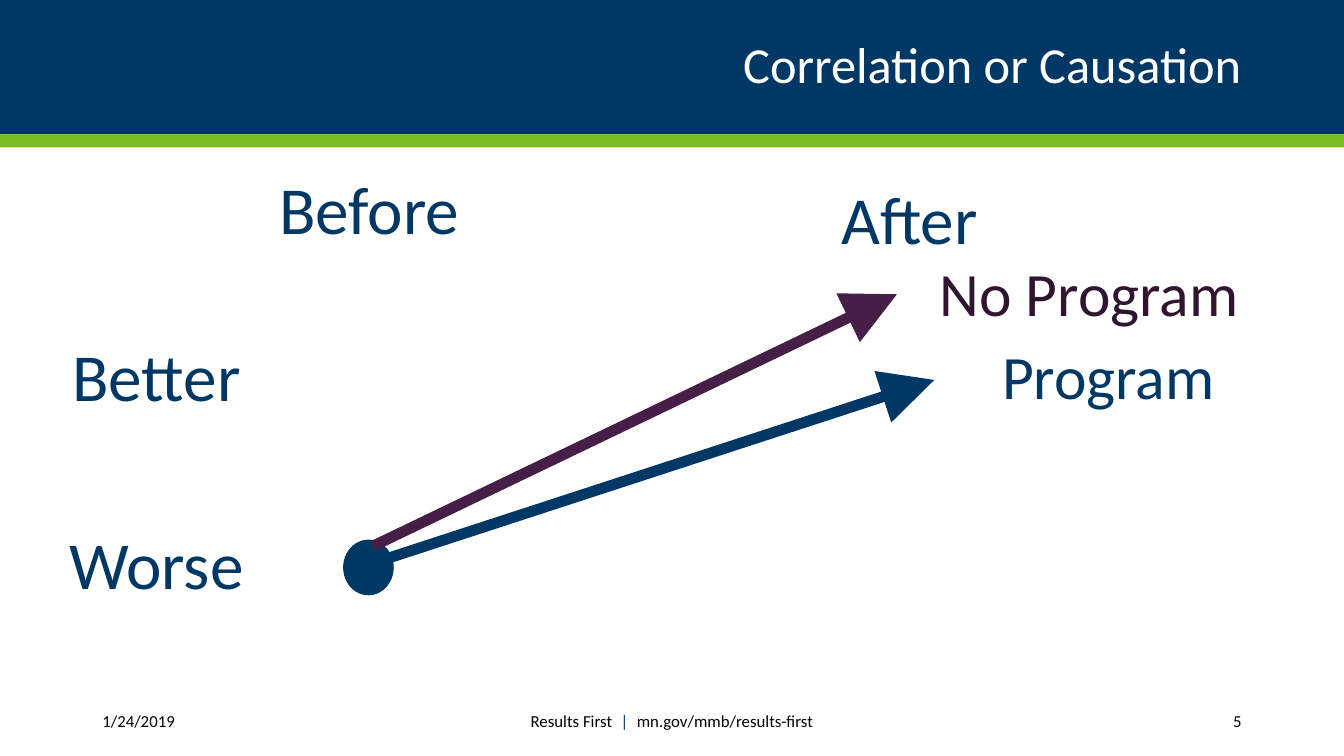
from pptx import Presentation
from pptx.dml.color import RGBColor
from pptx.enum.shapes import MSO_CONNECTOR as Line, MSO_SHAPE as Shape
from pptx.enum.text import MSO_ANCHOR as Anchor, PP_ALIGN as Align
from pptx.oxml.ns import qn
from pptx.util import Pt
from lxml.etree import SubElement

WIDTH, HEIGHT = 960, 540
FONT = "Calibri"
COLORS = {
    "navy": "003865",
    "green": "78BE21",
    "plum": "461F47",
    "dark plum": "2F152F",
    "white": "FFFFFF",
    "black": "000000",
}


def color(name):
    return RGBColor.from_string(COLORS[name])


def style(run, size, ink):
    run.font.name = FONT
    run.font.size = Pt(size)
    run.font.color.rgb = color(ink)


def add_solid(slide, kind, box, ink):
    shape = slide.shapes.add_shape(kind, *map(Pt, box))
    shape.shadow.inherit = False
    shape.fill.solid()
    shape.fill.fore_color.rgb = color(ink)
    shape.line.fill.background()
    return shape


def set_line(frame, parts, size, align):
    """Fill a text frame with one line made of (words, colour) parts."""
    frame.word_wrap = True
    frame.vertical_anchor = Anchor.MIDDLE
    para = frame.paragraphs[0]
    para.alignment = align
    for words, ink in parts:
        run = para.add_run()
        run.text = words
        style(run, size, ink)
    return para


def add_note(slide, box, parts, align):
    frame = slide.shapes.add_textbox(*map(Pt, box)).text_frame
    set_line(frame, parts, 12, align)


def add_label(slide, box, words, size=48, ink="navy"):
    """Add centred words in an unfilled outline shape."""
    left, top, width, height = map(Pt, box)
    right, base = left + width, top + height
    outline = slide.shapes.build_freeform(left, top)
    outline.add_line_segments([(right, top), (right, base), (left, base)])
    shape = outline.convert_to_shape()
    shape.shadow.inherit = False
    shape.fill.background()
    shape.line.fill.background()
    frame = shape.text_frame
    frame.margin_left = frame.margin_right = Pt(4.5)
    frame.margin_top = frame.margin_bottom = Pt(4.5)
    para = set_line(frame, [(words, ink)], size, Align.CENTER)
    para.line_spacing = 0.9


def add_arrow(slide, start, end, ink):
    arrow = slide.shapes.add_connector(Line.STRAIGHT, *map(Pt, start + end))
    arrow.line.color.rgb = color(ink)
    arrow.line.width = Pt(7.75)
    stroke = arrow.element.spPr.find(qn("a:ln"))
    SubElement(stroke, qn("a:tailEnd"), type="triangle", w="lg", len="lg")
    SubElement(arrow.element.spPr, qn("a:effectLst"))


def add_header(slide, left, top, width, height):
    add_solid(slide, Shape.RECTANGLE, (left, top, width, height), "navy")
    add_solid(slide, Shape.RECTANGLE, (left, top + height, width, 9.2), "green")
    title = slide.shapes.title
    title.left, title.top = Pt(left + 66), Pt(top + 12)
    title.width, title.height = Pt(width - 132), Pt(height - 24)
    frame = title.text_frame
    frame.text = "Correlation or Causation"
    frame.vertical_anchor = Anchor.MIDDLE
    para = frame.paragraphs[0]
    para.alignment = Align.RIGHT
    para.line_spacing = 0.9
    style(para.runs[0], 36, "white")
    # The title starts at the back, so bring it in front of the band.
    title.element.getparent().append(title.element)


def add_trends(slide, left, top):
    """Draw the before and after diagram from its top left corner."""
    wide, high = 205.2, 83.5
    add_label(slide, (left + 152, top, wide, high), "Before")
    add_label(slide, (left + 538, top + 7, wide, high), "After")
    for words, down in (("Better", 119.5), ("Worse", 253.5)):
        add_label(slide, (left, top + down, wide, high), words)

    dot = add_solid(slide, Shape.OVAL, (left + 236.3, top + 275.7, 35.3, 38.9), "navy")
    dot.line.color.rgb = color("navy")
    dot.line.width = Pt(0.85)
    for start, end, ink in (
        ((254.3, 293), (658.2, 161.2), "navy"),
        ((257, 280), (631.5, 100), "plum"),
    ):
        add_arrow(
            slide,
            (left + start[0], top + start[1]),
            (left + end[0], top + end[1]),
            ink,
        )
    add_label(slide, (left + 658.4, top + 119.5, 248.4, high), "Program", 44)
    add_label(slide, (left + 631.8, top + 61.6, 274.3, 80), "No Program", 44, "dark plum")


def add_footer(slide, left, top, width, height):
    date, page, side = 107, 115, 194
    add_note(slide, (left, top, date, height), [("1/24/2019", "black")], Align.LEFT)
    source = [
        ("Results First\N{EN SPACE}", "black"),
        ("|", "navy"),
        ("\N{EN SPACE}mn.gov/mmb/results-first", "black"),
    ]
    add_note(slide, (left + side, top, width - 2 * side, height), source, Align.CENTER)
    corner = (left + width - page, top, page, height)
    add_note(slide, corner, [("5", "black")], Align.RIGHT)


def main():
    deck = Presentation()
    deck.slide_width, deck.slide_height = Pt(WIDTH), Pt(HEIGHT)
    slide = deck.slides.add_slide(deck.slide_layouts[5])
    add_header(slide, 0, 0, WIDTH, 96)
    add_trends(slide, 9.2, 110.2)
    add_footer(slide, 66, 500.5, WIDTH - 132, 28.75)
    deck.save("out.pptx")


if __name__ == "__main__":
    main()
